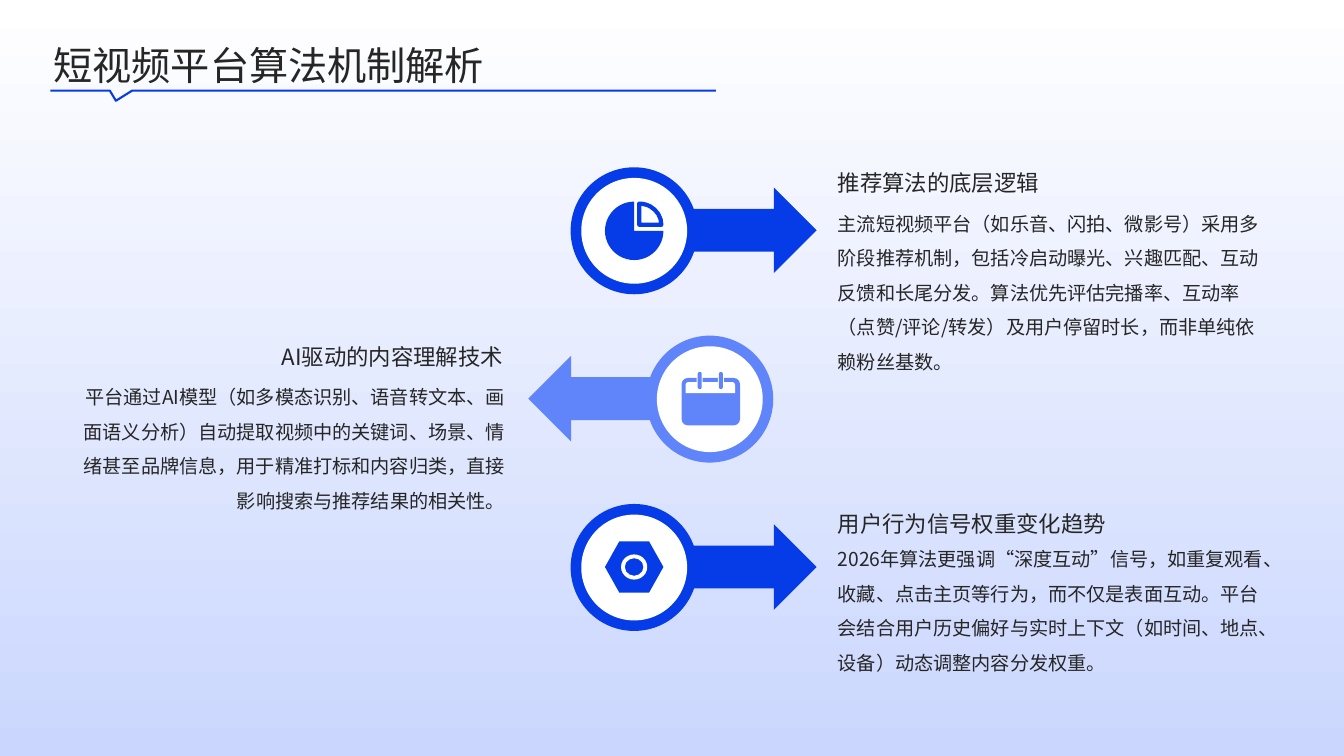
from lxml import etree
from pptx import Presentation
from pptx.dml.color import RGBColor
from pptx.enum.shapes import MSO_SHAPE
from pptx.enum.text import MSO_ANCHOR, MSO_AUTO_SIZE, PP_ALIGN
from pptx.oxml.ns import qn
from pptx.util import Inches, Pt

OVAL, RECT, PIE = MSO_SHAPE.OVAL, MSO_SHAPE.RECTANGLE, MSO_SHAPE.PIE
ROUND, TOPS = MSO_SHAPE.ROUNDED_RECTANGLE, MSO_SHAPE.ROUND_2_SAME_RECTANGLE
HEX, RING = MSO_SHAPE.HEXAGON, MSO_SHAPE.DONUT
EAST, WEST = MSO_SHAPE.RIGHT_ARROW, MSO_SHAPE.LEFT_ARROW
TOP, BOTTOM = MSO_ANCHOR.TOP, MSO_ANCHOR.BOTTOM
LEFT, RIGHT = PP_ALIGN.LEFT, PP_ALIGN.RIGHT
FONT = "Noto Sans CJK SC"
HUES = {"blue": "063CE8", "light": "6085FB", "white": "FFFFFF",
        "mist": "CAD6FE", "ink": "262626"}
RGB = {name: RGBColor.from_string(code) for name, code in HUES.items()}


def put(kind, x, y, w, h, hue, *adjust):
    """Add a filled preset shape without line or shadow."""
    shape = slide.shapes.add_shape(kind, Inches(x), Inches(y), Inches(w), Inches(h))
    shape.shadow.inherit = False
    shape.fill.solid()
    shape.fill.fore_color.rgb = RGB[hue]
    shape.line.fill.background()
    for i, value in enumerate(adjust):
        shape.adjustments[i] = value
    return shape


def write(box, text, size, space, anchor=TOP, align=LEFT):
    """Fill a box with one styled paragraph and no margins."""
    frame = box.text_frame
    frame.text = text
    frame.word_wrap = True
    frame.auto_size = MSO_AUTO_SIZE.NONE
    frame.vertical_anchor = anchor
    frame.margin_left = frame.margin_right = 0
    frame.margin_top = frame.margin_bottom = 0
    para = frame.paragraphs[0]
    para.alignment = align
    para.line_spacing = space
    para.space_before = Pt(0)
    font = para.runs[0].font
    font.name = FONT
    font.size = Pt(size)
    font.color.rgb = RGB["ink"]
    etree.SubElement(para.runs[0]._r.rPr, qn("a:ea")).set("typeface", FONT)


deck = Presentation()
deck.slide_width, deck.slide_height = Inches(13.33), Inches(7.5)
slide = deck.slides.add_slide(deck.slide_layouts[5])

# Backdrop, white at the top
back = slide.background.fill
back.gradient()
back.gradient_angle = 270
for stop, hue in zip(back.gradient_stops, ("white", "mist")):
    stop.color.rgb = RGB[hue]
back.gradient_stops[0].position = 0
back.gradient_stops[1].position = 1

# Title and notched rule
title = slide.shapes.title
title.left, title.top = Inches(0.53), Inches(0.27)
title.width, title.height = Inches(11.35), Inches(0.59)
write(title, "短视频平台算法机制解析", 28, 1.3)

notch = [(1.09, 0.9), (1.15, 1), (1.31, 0.9), (7.1, 0.9)]
pen = slide.shapes.build_freeform(Inches(0.5), Inches(0.9))
pen.add_line_segments([(Inches(x), Inches(y)) for x, y in notch], close=False)
rule = pen.convert_to_shape()
rule.shadow.inherit = False
rule.fill.background()
rule.line.color.rgb = RGB["blue"]
rule.line.width = Pt(1.5)

# Three points: arrow, disc centre, hue, text left, head top, body top, align
points = [
    (EAST, 6.55, 6.29, "blue", 8.31, 1.26, 8.31, 1.99, LEFT, "推荐算法的底层逻辑",
     "主流短视频平台（如乐音、闪拍、微影号）采用多阶段推荐机制，包括冷启动曝光、"
     "兴趣匹配、互动反馈和长尾分发。算法优先评估完播率、互动率（点赞/评论/转发）"
     "及用户停留时长，而非单纯依赖粉丝基数。"),
    (WEST, 5.24, 7.04, "light", 0.71, 2.99, 0.73, 3.71, RIGHT, "AI驱动的内容理解技术",
     "平台通过AI模型（如多模态识别、语音转文本、画面语义分析）自动提取视频中的"
     "关键词、场景、情绪甚至品牌信息，用于精准打标和内容归类，直接影响搜索与"
     "推荐结果的相关性。"),
    (EAST, 6.55, 6.29, "blue", 8.31, 4.65, 8.31, 5.32, LEFT, "用户行为信号权重变化趋势",
     "2026年算法更强调“深度互动”信号，如重复观看、收藏、点击主页等行为，而不仅是"
     "表面互动。平台会结合用户历史偏好与实时上下文（如时间、地点、设备）动态调整"
     "内容分发权重。"),
]
for i, (arrow, tail, mid, hue, hx, hy, bx, by, align, head, body) in enumerate(points):
    y = 2.29 + 1.67 * i
    put(arrow, tail, y - 0.43, 1.55, 0.85, hue)
    for size, tone in ((1.26, hue), (1.05, "white")):
        put(OVAL, mid - size / 2, y - size / 2, size, size, tone)
    box = slide.shapes.add_textbox(Inches(hx), Inches(hy), Inches(4.28), Inches(0.68))
    write(box, head, 16, 1.3, BOTTOM, align)
    box = slide.shapes.add_textbox(Inches(bx), Inches(by), Inches(4.28), Inches(1.43))
    write(box, body, 13.7, 1.5, TOP, align)

# Pie icon: angles are in units of 1/0.6 degree
put(PIE, 6, 2, 0.58, 0.58, "blue", 0, 162)
slice = put(PIE, 6.12, 2.02, 0.44, 0.42, "white", 162, 0)
slice.line.color.rgb = RGB["blue"]
slice.line.width = Pt(3)

# Calendar icon
put(ROUND, 6.76, 3.75, 0.58, 0.47, "light", 0.13)
put(TOPS, 6.8, 3.79, 0.49, 0.11, "white", 0.25, 0)
for x in (6.94, 7.15):
    put(RECT, x - 0.03, 3.75, 0.06, 0.04, "white")
    put(ROUND, x - 0.02, 3.69, 0.04, 0.17, "light", 0.5)

# Nut icon
put(HEX, 6, 5.37, 0.58, 0.51, "blue", 0.28)
put(RING, 6.16, 5.5, 0.26, 0.25, "white", 0.15)

deck.save("out.pptx")
